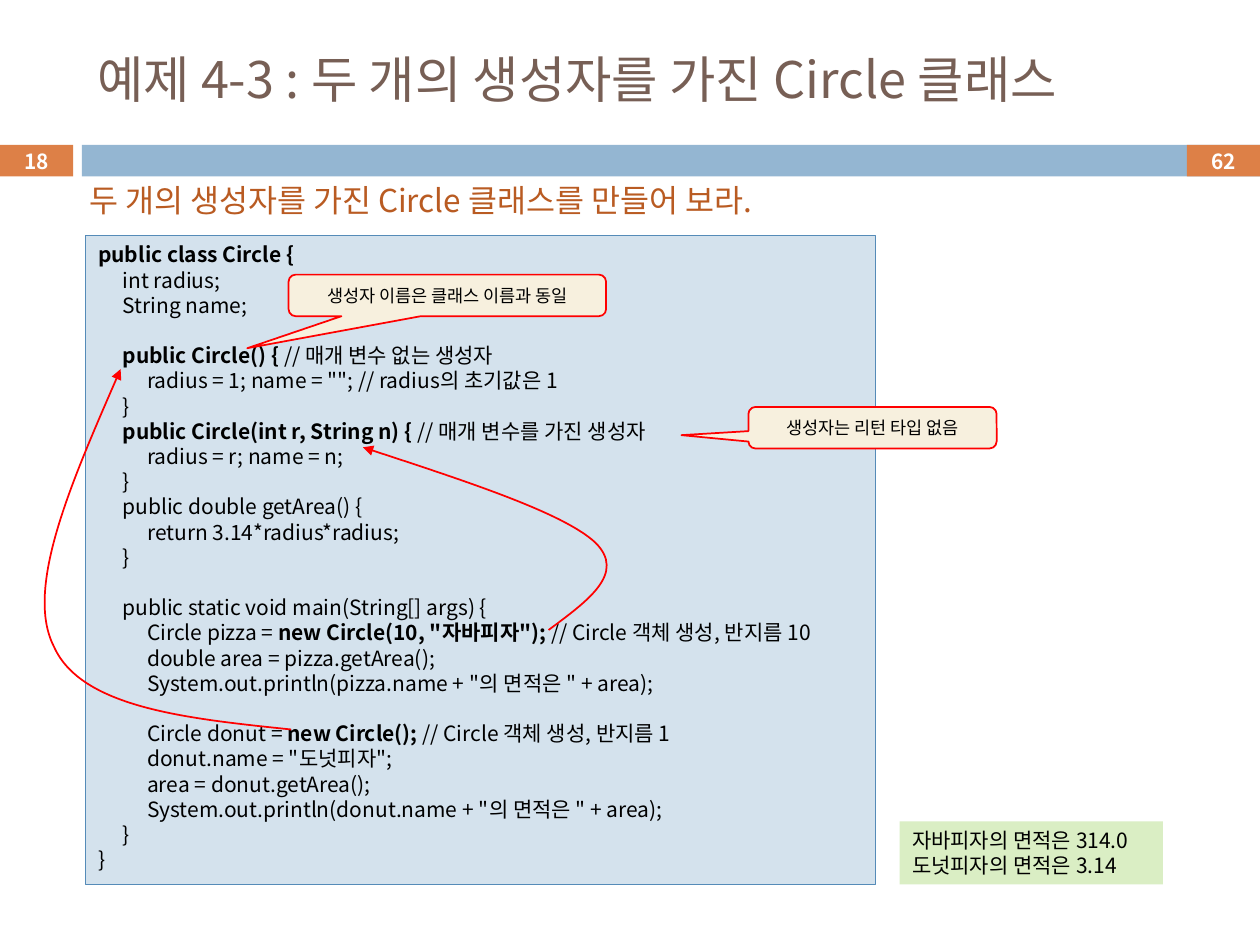
from collections import namedtuple

from pptx import Presentation
from pptx import util as u
from pptx.dml.color import RGBColor
from pptx.enum import shapes, text
from pptx.oxml import ns, xmlchemy

Box = namedtuple("Box", "left top width height")
FONT = "Noto Sans CJK KR"
BLACK = RGBColor(0, 0, 0)
WHITE = RGBColor(255, 255, 255)
RED = RGBColor(255, 0, 0)
BROWN = RGBColor(0x77, 0x5F, 0x55)
RUST = RGBColor(0xB9, 0x5B, 0x22)
ORANGE = RGBColor(0xDD, 0x80, 0x47)
BLUE = RGBColor(0x94, 0xB6, 0xD2)
PALE_BLUE = RGBColor(0xD4, 0xE2, 0xED)
EDGE_BLUE = RGBColor(0x55, 0x8B, 0xB8)
GREEN = RGBColor(0xDA, 0xEE, 0xC4)
CREAM = RGBColor(0xF7, 0xF0, 0xDE)
LEFT, CENTER = text.PP_ALIGN.LEFT, text.PP_ALIGN.CENTER
TOP, MIDDLE = text.MSO_ANCHOR.TOP, text.MSO_ANCHOR.MIDDLE
CELL = u.Inches(0.1)
INDENT = u.Inches(0.195)
LINE_PITCH = u.Pt(14.4)

CODE = [
    (0, "**public class Circle {"),
    (1, "int radius;"),
    (1, "String name;"),
    None,
    (1, "**public Circle() {** // 매개 변수 없는 생성자"),
    (2, 'radius = 1; name = ""; // radius의 초기값은 1'),
    (1, "}"),
    (1, "**public Circle(int r, String n) { **// 매개 변수를 가진 생성자"),
    (2, "radius = r; name = n;"),
    (1, "}"),
    (1, "public double getArea() {"),
    (2, "return 3.14*radius*radius;"),
    (1, "}"),
    None,
    (1, "public static void main(String[] args) {"),
    (2, 'Circle pizza = **new Circle(10, "자바피자"); **// Circle 객체 생성, 반지름 10'),
    (2, "double area = pizza.getArea();"),
    (2, 'System.out.println(pizza.name + "의 면적은 " + area);'),
    None,
    (2, "Circle donut = **new Circle(); **// Circle 객체 생성, 반지름 1"),
    (2, 'donut.name = "도넛피자";'),
    (2, "area = donut.getArea();"),
    (2, 'System.out.println(donut.name + "의 면적은 " + area);'),
    (1, "}"),
    (0, "}"),
]


def grid(col, row, cols, rows):
    return Box(*(round(value * CELL) for value in (col, row, cols, rows)))


def apply(target, values):
    for name, value in values.items():
        setattr(target, name, value)


def add_span(para, words, size, color, bold=False):
    span = para.add_run()
    span.text = words
    apply(span.font, {"size": u.Pt(size), "bold": bold, "name": FONT})
    span.font.color.rgb = color
    asian = xmlchemy.OxmlElement("a:ea")
    asian.set("typeface", FONT)
    span.font._element.append(asian)


def write_lines(shape, lines, size, color, align=LEFT, anchor=TOP, bold=False):
    frame = shape.text_frame
    apply(frame, {"word_wrap": True, "auto_size": text.MSO_AUTO_SIZE.NONE,
                  "vertical_anchor": anchor})
    for number, words in enumerate(lines):
        para = frame.add_paragraph() if number else frame.paragraphs[0]
        apply(para, {"alignment": align, "line_spacing": u.Pt(size * 1.2)})
        add_span(para, words, size, color, bold)


def add_panel(page, box, fill, line=None, weight=1, kind=shapes.MSO_SHAPE.RECTANGLE):
    panel = page.shapes.add_shape(kind, *box)
    panel.shadow.inherit = False
    panel.fill.solid()
    panel.fill.fore_color.rgb = fill
    if line is None:
        panel.line.fill.background()
    else:
        panel.line.color.rgb = line
        panel.line.width = u.Pt(weight)
    return panel


def header(page, box):
    title = page.shapes.title
    apply(title, {"left": box.left + round(6.7 * CELL), "top": box.top,
                  "width": round(box.width * 0.892), "height": round(7.4 * CELL)})
    write_lines(title, ["예제 4-3 : 두 개의 생성자를 가진 Circle 클래스"], 28.8, BROWN, LEFT, MIDDLE)

    bar_top, bar_height = box.top + 9 * CELL, round(2.5 * CELL)
    tab_width = round(5.8 * CELL)
    bar_left = round(6.5 * CELL)
    add_panel(page, Box(bar_left, bar_top, box.width - bar_left, bar_height), BLUE)
    for left, number in ((0, "18"), (box.width - tab_width, "62")):
        tab = add_panel(page, Box(left, bar_top, tab_width, bar_height), ORANGE)
        write_lines(tab, [number], 11.9, WHITE, CENTER, MIDDLE, True)


def task(page, box):
    label = page.shapes.add_textbox(*box)
    write_lines(label, ["두 개의 생성자를 가진 Circle 클래스를 만들어 보라."], 18, RUST)


def code_listing(page, box):
    panel = add_panel(page, box, PALE_BLUE, EDGE_BLUE, 0.75)
    frame = panel.text_frame
    apply(frame, {"word_wrap": True, "vertical_anchor": TOP})
    gap = False
    for number, line in enumerate(CODE):
        if line is None:
            gap = True
            continue
        level, words = line
        para = frame.add_paragraph() if number else frame.paragraphs[0]
        apply(para, {"alignment": LEFT, "line_spacing": LINE_PITCH,
                     "space_before": LINE_PITCH if gap else u.Pt(0)})
        para._p.get_or_add_pPr().set("marL", str(level * INDENT))
        for part, piece in enumerate(words.split("**")):
            if piece:
                add_span(para, piece, 12, BLACK, part % 2 == 1)
        gap = False


def output(page, box):
    panel = add_panel(page, box, GREEN)
    write_lines(panel, ["자바피자의 면적은 314.0", "도넛피자의 면적은 3.14"], 12, BLACK)


def curved_arrow(page, box, start, curves):
    builder = page.shapes.build_freeform(box.left, box.top)
    builder.add_line_segments([(box.left + box.width, box.top + box.height)], close=False)
    arrow = builder.convert_to_shape()
    arrow.shadow.inherit = False
    arrow.fill.background()
    arrow.line.color.rgb = RED
    arrow.line.width = u.Pt(1)
    outline = next(arrow._element.iter(ns.qn("a:path")))
    for child in list(outline):
        outline.remove(child)
    for tag, points in [("a:moveTo", [start])] + [("a:cubicBezTo", c) for c in curves]:
        step = xmlchemy.OxmlElement(tag)
        for x, y in points:
            point = xmlchemy.OxmlElement("a:pt")
            point.set("x", str(round(x * box.width)))
            point.set("y", str(round(y * box.height)))
            step.append(point)
        outline.append(step)
    head = xmlchemy.OxmlElement("a:tailEnd")
    head.set("type", "triangle")
    arrow.line._get_or_add_ln().append(head)


def callout(page, box, words, tip):
    bubble = add_panel(page, box, CREAM, RED, 1, shapes.MSO_SHAPE.ROUNDED_RECTANGULAR_CALLOUT)
    for index, value in enumerate((*tip, 0.17)):
        bubble.adjustments[index] = value
    write_lines(bubble, [words], 10, BLACK, CENTER, MIDDLE)


def main():
    deck = Presentation()
    deck.slide_width, deck.slide_height = 100 * CELL, 75 * CELL
    page = deck.slides.add_slide(deck.slide_layouts[5])
    header(page, grid(0, 2.5, 100, 11.5))
    task(page, grid(6.1, 13.9, 75.7, 4))
    code_listing(page, grid(6.8, 18.7, 62.7, 51.5))
    output(page, grid(71.4, 65.2, 20.9, 5))
    curved_arrow(page, grid(28.8, 35.5, 19.4, 14.5), (0.76, 1),
                 [[(0.92, 0.84), (1.08, 0.69), (0.95, 0.52)],
                  [(0.82, 0.36), (0.41, 0.18), (0, 0)]])
    curved_arrow(page, grid(3.5, 29.3, 19.6, 28.6), (1, 1),
                 [[(0.58, 0.97), (0.15, 0.94), (0.04, 0.77)],
                  [(-0.08, 0.61), (0.12, 0.3), (0.31, 0)]])
    callout(page, grid(22.9, 21.8, 25.2, 3.3), "생성자 이름은 클래스 이름과 동일", (-0.63, 1.27))
    callout(page, grid(59.4, 32.3, 19.7, 3.3), "생성자는 리턴 타입 없음", (-0.77, 0.18))
    deck.save("out.pptx")


if __name__ == "__main__":
    main()
